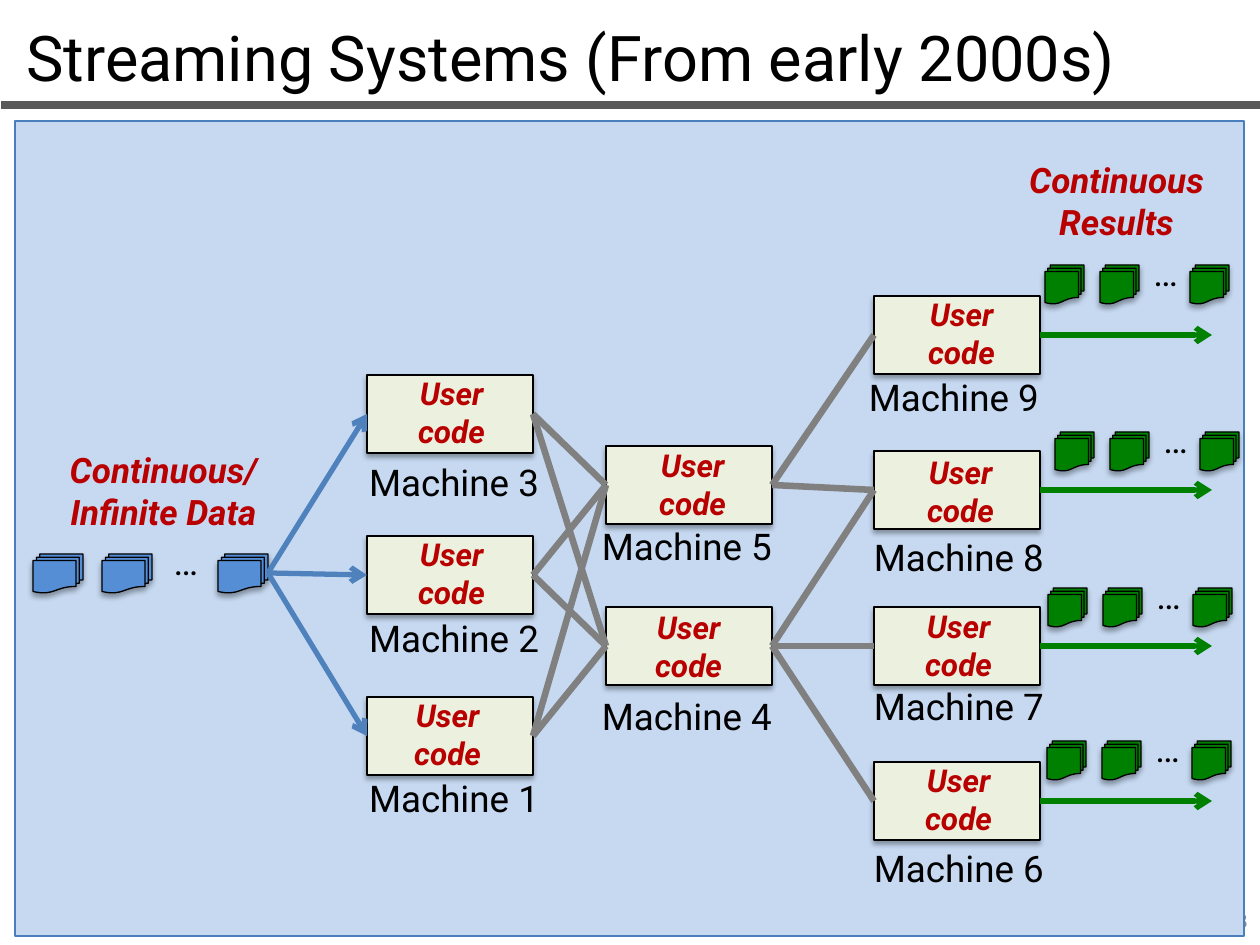
from lxml import etree
from pptx import Presentation
from pptx.dml.color import RGBColor
from pptx.enum.shapes import MSO_CONNECTOR, MSO_SHAPE
from pptx.enum.text import MSO_ANCHOR, MSO_AUTO_SIZE, PP_ALIGN
from pptx.oxml.ns import qn
from pptx.util import Pt

RECT, DOCS = MSO_SHAPE.RECTANGLE, MSO_SHAPE.FLOWCHART_MULTIDOCUMENT
STRAIGHT = MSO_CONNECTOR.STRAIGHT
LEFT, CENTER, RIGHT = PP_ALIGN.LEFT, PP_ALIGN.CENTER, PP_ALIGN.RIGHT
GROW = MSO_AUTO_SIZE.SHAPE_TO_FIT_TEXT
MIDDLE = MSO_ANCHOR.MIDDLE
LEFT_SITE, RIGHT_SITE = 1, 3

COLORS = {
    "black": "000000", "rule": "595959", "page": "8C8C8C", "panel": "C6D9F1",
    "panel_edge": "4B7EBC", "box": "EBF1DE", "red": "B90000", "link": "808080",
    "arrow_in": "4F81BD", "docs_in": "558ED5", "result": "008000",
}

TITLE = "Streaming Systems (From early 2000s)"
PAGE = "28"
INPUT_CAPTION = ["Continuous/", "Infinite Data"]
OUTPUT_CAPTION = ["Continuous Results"]

# Column: box left, label left, label width
COLUMNS = {"ingest": (367, 345, 218), "middle": (606, 586, 202), "output": (874, 858, 202)}
# Machine: column, box top, label top, code left, code top
MACHINES = {
    1: ("ingest", 697, 770, 389, 690),
    2: ("ingest", 536, 610, 393, 529),
    3: ("ingest", 375, 454, 393, 368),
    4: ("middle", 607, 688, 630, 602),
    5: ("middle", 446, 518, 634, 440),
    6: ("output", 762, 840, 900, 755),
    7: ("output", 607, 678, 900, 601),
    8: ("output", 451, 529, 902, 447),
    9: ("output", 296, 369, 903, 289),
}
BOX_W, BOX_H = 166, 78
LINKS = [(1, 4), (2, 4), (2, 5), (3, 5), (3, 4), (1, 5),
         (5, 9), (5, 8), (4, 8), (4, 7), (4, 6)]

# Stream: left, top of its first document stack
INPUT_STREAM = (33, 554)
INPUT_END = (268, 573)
RESULT_STREAMS = {9: (1045, 265), 8: (1055, 432), 7: (1048, 588), 6: (1047, 741)}
RESULT_END_X = 1212
# Stack offsets, stack width, ellipsis offset, ellipsis width
INPUT_LAYOUT = ((0, 69, 185), 50, 122, 62)
RESULT_LAYOUT = ((0, 55, 145), 39, 96, 49)
STACK_H = 39


def px(value):
    return round(value * 914400 / 126)


def rgb(name):
    return RGBColor.from_string(COLORS[name])


def add_text(shapes, box, lines, size, color="black", font="Roboto", align=CENTER, strong=False):
    text_box = shapes.add_textbox(*map(px, box))
    frame = text_box.text_frame
    frame.word_wrap = True
    frame.auto_size = GROW
    for i, line in enumerate(lines):
        paragraph = frame.add_paragraph() if i else frame.paragraphs[0]
        paragraph.alignment = align
        run = paragraph.add_run()
        run.text = line
        run.font.name, run.font.size = font, Pt(size)
        run.font.bold = run.font.italic = strong
        run.font.color.rgb = rgb(color)
    return text_box


def add_solid(shapes, kind, box, fill, edge="black", shadow=True):
    solid = shapes.add_shape(kind, *map(px, box))
    solid.fill.solid()
    solid.fill.fore_color.rgb = rgb(fill)
    solid.line.color.rgb = rgb(edge)
    solid.line.width = Pt(0.75)
    solid.shadow.inherit = False
    if shadow:
        effects = solid._element.spPr.find(qn("a:effectLst"))
        outer = etree.SubElement(effects, qn("a:outerShdw"), blurRad=str(Pt(3.1)),
                                 dist=str(Pt(1.8)), dir="5400000", rotWithShape="0")
        tint = etree.SubElement(outer, qn("a:srgbClr"), val=COLORS["black"])
        etree.SubElement(tint, qn("a:alpha"), val="35000")
    return solid


def add_line(shapes, start, end, color, width, arrow=False):
    """Join two ends, each a point in px or a (box, connection site) pair."""
    line = shapes.add_connector(STRAIGHT, 0, 0, 0, 0)
    if isinstance(start[0], int):
        line.begin_x, line.begin_y = map(px, start)
    else:
        line.begin_connect(*start)
    if isinstance(end[0], int):
        line.end_x, line.end_y = map(px, end)
    else:
        line.end_connect(*end)
    line.line.color.rgb = rgb(color)
    line.line.width = Pt(width)
    properties = line._element.spPr
    if arrow:
        etree.SubElement(properties.find(qn("a:ln")), qn("a:tailEnd"), type="arrow")
    etree.SubElement(properties, qn("a:effectLst"))


def add_stream(shapes, origin, layout, color):
    left, top = origin
    offsets, stack_w, dots_offset, dots_w = layout
    group = shapes.add_group_shape().shapes
    for offset in offsets:
        add_solid(group, DOCS, (left + offset, top, stack_w, STACK_H), color)
    add_text(group, (left + dots_offset, top - 21, dots_w, 57), ["…"], 21)


def main():
    prs = Presentation()
    prs.slide_width, prs.slide_height = px(1260), px(945)
    shapes = prs.slides.add_slide(prs.slide_layouts[6]).shapes

    add_line(shapes, (1, 105), (1261, 105), "rule", 4.5)
    add_text(shapes, (14, 12, 1215, 89), [TITLE], 36, align=LEFT)
    page = add_text(shapes, (966, 895, 294, 50), [PAGE], 12, "page", "Calibri", RIGHT)
    page.text_frame.auto_size = MSO_AUTO_SIZE.NONE
    page.text_frame.vertical_anchor = MIDDLE
    add_solid(shapes, RECT, (15, 121, 1229, 815), "panel", "panel_edge", shadow=False)

    boxes = {}
    for number, (column, top, *_) in MACHINES.items():
        boxes[number] = add_solid(shapes, RECT, (COLUMNS[column][0], top, BOX_W, BOX_H), "box")

    for source, target in LINKS:
        add_line(shapes, (boxes[source], RIGHT_SITE), (boxes[target], LEFT_SITE), "link", 3.75)

    add_stream(shapes, INPUT_STREAM, INPUT_LAYOUT, "docs_in")
    for number in (1, 2, 3):
        add_line(shapes, INPUT_END, (boxes[number], LEFT_SITE), "arrow_in", 3, arrow=True)

    for number, origin in RESULT_STREAMS.items():
        middle = MACHINES[number][1] + BOX_H // 2
        add_line(shapes, (boxes[number], RIGHT_SITE), (RESULT_END_X, middle),
                 "result", 3, arrow=True)
        add_stream(shapes, origin, RESULT_LAYOUT, "result")

    for number, (column, _, label_top, code_left, code_top) in MACHINES.items():
        _, label_left, label_w = COLUMNS[column]
        if number == 9:
            label_left -= 5
        add_text(shapes, (label_left, label_top, label_w, 57), [f"Machine {number}"], 21)
        add_text(shapes, (code_left, code_top, 117, 89), ["User code"], 18, "red", strong=True)

    add_text(shapes, (15, 442, 297, 97), INPUT_CAPTION, 20, "red", strong=True)
    add_text(shapes, (968, 152, 297, 97), OUTPUT_CAPTION, 20, "red", strong=True)

    prs.save("out.pptx")


if __name__ == "__main__":
    main()
